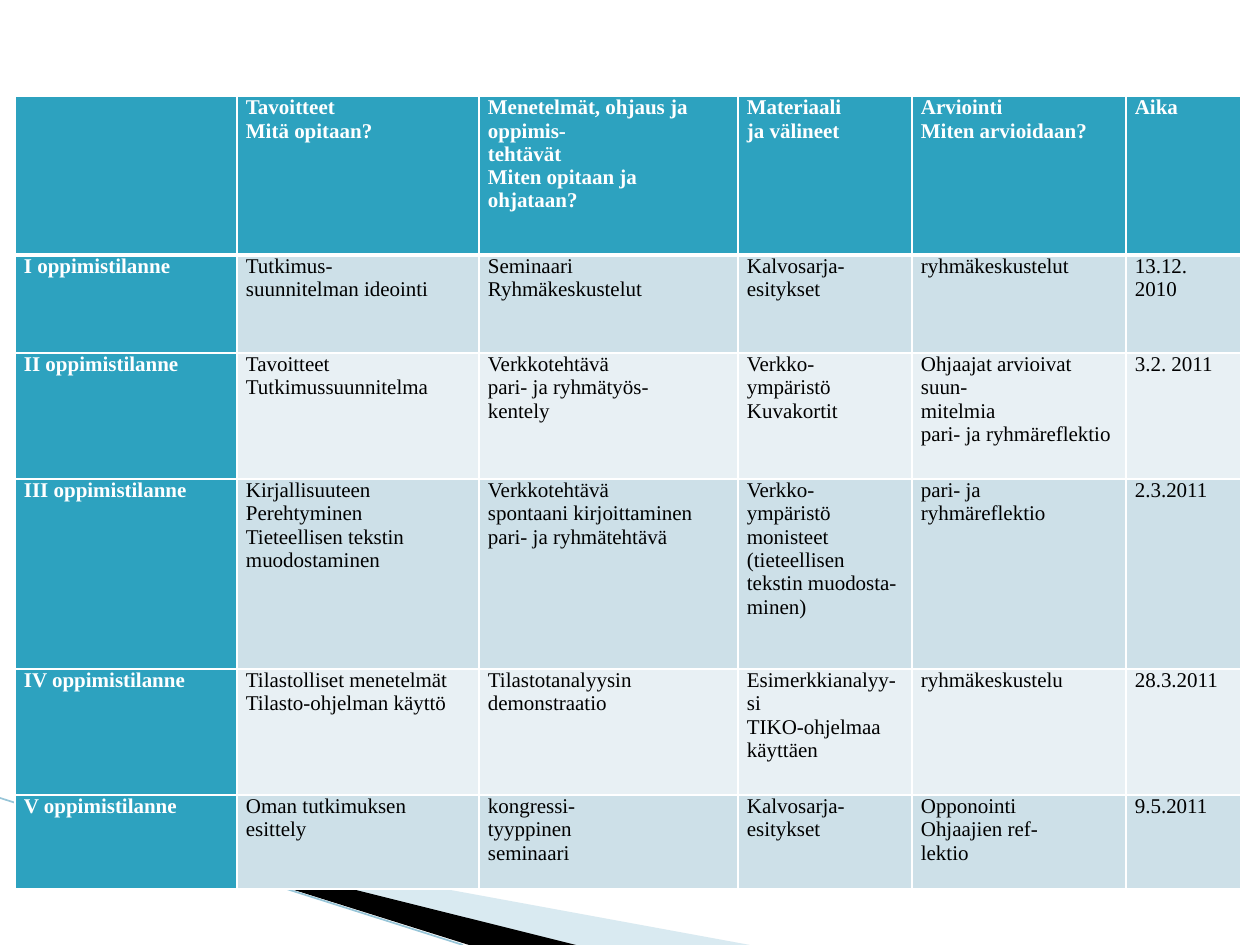
from pptx import Presentation
from pptx.dml.color import RGBColor as RGB
from pptx.enum.shapes import MSO_CONNECTOR as CONNECTOR
from pptx.oxml import parse_xml
from pptx.oxml.ns import nsdecls
from pptx.util import Pt
from lxml.etree import SubElement

PX = 914400 / 126
COLORS = {
    "header": "2DA2BF", "odd": "CDE0E8", "even": "E8F0F4", "white": "FFFFFF",
    "black": "000000", "pale": "A0CBDC", "stripe": "97C5D8",
}


def emu(px):
    return round(px * PX)


def color(name):
    return RGB.from_string(COLORS[name])


prs = Presentation()
prs.slide_width, prs.slide_height = emu(1260), emu(945)
slide = prs.slides.add_slide(prs.slide_layouts[6])

wedges = [
    ("pale", [(69, 820), (750, 945), (575, 945), (69, 819)]),
    ("black", [(67, 818), (576, 945), (469, 945), (68, 819)]),
]
for fill_name, points in wedges:
    builder = slide.shapes.build_freeform(*points[0], scale=PX)
    builder.add_line_segments(points[1:], close=True)
    wedge = builder.convert_to_shape()
    wedge.shadow.inherit = False
    wedge.fill.solid()
    wedge.fill.fore_color.rgb = color(fill_name)
    wedge.line.fill.background()
    if fill_name == "pale":
        tint = wedge.fill._xPr.find(".//{*}srgbClr")
        tint.append(parse_xml(f'<a:alpha {nsdecls("a")} val="40000"/>'))

stripe = slide.shapes.add_connector(CONNECTOR.STRAIGHT, 0, emu(798), emu(463), emu(945))
stripe.line.color.rgb = color("stripe")
stripe.line.width = Pt(0.95)
stripe_props = stripe._element.spPr
SubElement(stripe_props, "{http://schemas.openxmlformats.org/drawingml/2006/main}effectLst")

plan = [
    ["", "Tavoitteet\nMitä opitaan?",
     "Menetelmät, ohjaus ja oppimis-\ntehtävät\nMiten opitaan ja ohjataan?",
     "Materiaali\nja välineet", "Arviointi\nMiten arvioidaan?", "Aika"],
    ["I oppimistilanne", "Tutkimus-\nsuunnitelman ideointi",
     "Seminaari\nRyhmäkeskustelut", "Kalvosarja-\nesitykset",
     "ryhmäkeskustelut", "13.12.\n2010"],
    ["II oppimistilanne", "Tavoitteet\nTutkimussuunnitelma",
     "Verkkotehtävä\npari- ja ryhmätyös-\nkentely",
     "Verkko-\nympäristö\nKuvakortit",
     "Ohjaajat arvioivat suun-\nmitelmia\npari- ja ryhmäreflektio", "3.2. 2011"],
    ["III oppimistilanne",
     "Kirjallisuuteen\nPerehtyminen\nTieteellisen tekstin muodostaminen",
     "Verkkotehtävä\nspontaani kirjoittaminen\npari- ja ryhmätehtävä",
     "Verkko-\nympäristö\nmonisteet\n(tieteellisen\ntekstin muodosta-\nminen)",
     "pari- ja\nryhmäreflektio", "2.3.2011"],
    ["IV oppimistilanne", "Tilastolliset menetelmät\nTilasto-ohjelman käyttö",
     "Tilastotanalyysin demonstraatio",
     "Esimerkkianalyy-si\nTIKO-ohjelmaa käyttäen", "ryhmäkeskustelu", "28.3.2011"],
    ["V oppimistilanne", "Oman tutkimuksen\nesittely",
     "kongressi-\ntyyppinen\nseminaari", "Kalvosarja- esitykset",
     "Opponointi\nOhjaajien ref-\nlektio", "9.5.2011"],
]
column_widths = [222, 242, 259, 174, 214, 115]
row_heights = [159, 98, 126, 190, 126, 94]

schedule = slide.shapes.add_table(
    len(plan), len(column_widths), emu(15), emu(96),
    emu(sum(column_widths)), emu(sum(row_heights))).table
for column, width in zip(schedule.columns, column_widths):
    column.width = emu(width)
for row, height in zip(schedule.rows, row_heights):
    row.height = emu(height)

for r, entries in enumerate(plan):
    for c, entry in enumerate(entries):
        cell = schedule.cell(r, c)
        heading = r == 0 or c == 0
        cell.margin_left = cell.margin_right = emu(9)
        cell.margin_top = cell.margin_bottom = 0
        cell.fill.solid()
        cell.fill.fore_color.rgb = color("header" if heading else "odd" if r % 2 else "even")

        for i, line in enumerate(entry.split("\n")):
            frame = cell.text_frame
            paragraph = frame.paragraphs[0] if i == 0 else frame.add_paragraph()
            if line:
                run = paragraph.add_run()
                run.text = line
                run.font.name = "Times New Roman"
                run.font.size = Pt(12)
                run.font.bold = heading
                run.font.color.rgb = color("white" if heading else "black")

        borders = {"L": 1, "R": 1, "T": 3 if r == 1 else 1, "B": 3 if r == 0 else 1}
        for i, (side, points) in enumerate(borders.items()):
            cell._tc.tcPr.insert(i, parse_xml(
                f'<a:ln{side} {nsdecls("a")} w="{Pt(points)}"><a:solidFill>'
                f'<a:srgbClr val="{COLORS["white"]}"/></a:solidFill></a:ln{side}>'))

prs.save("out.pptx")
